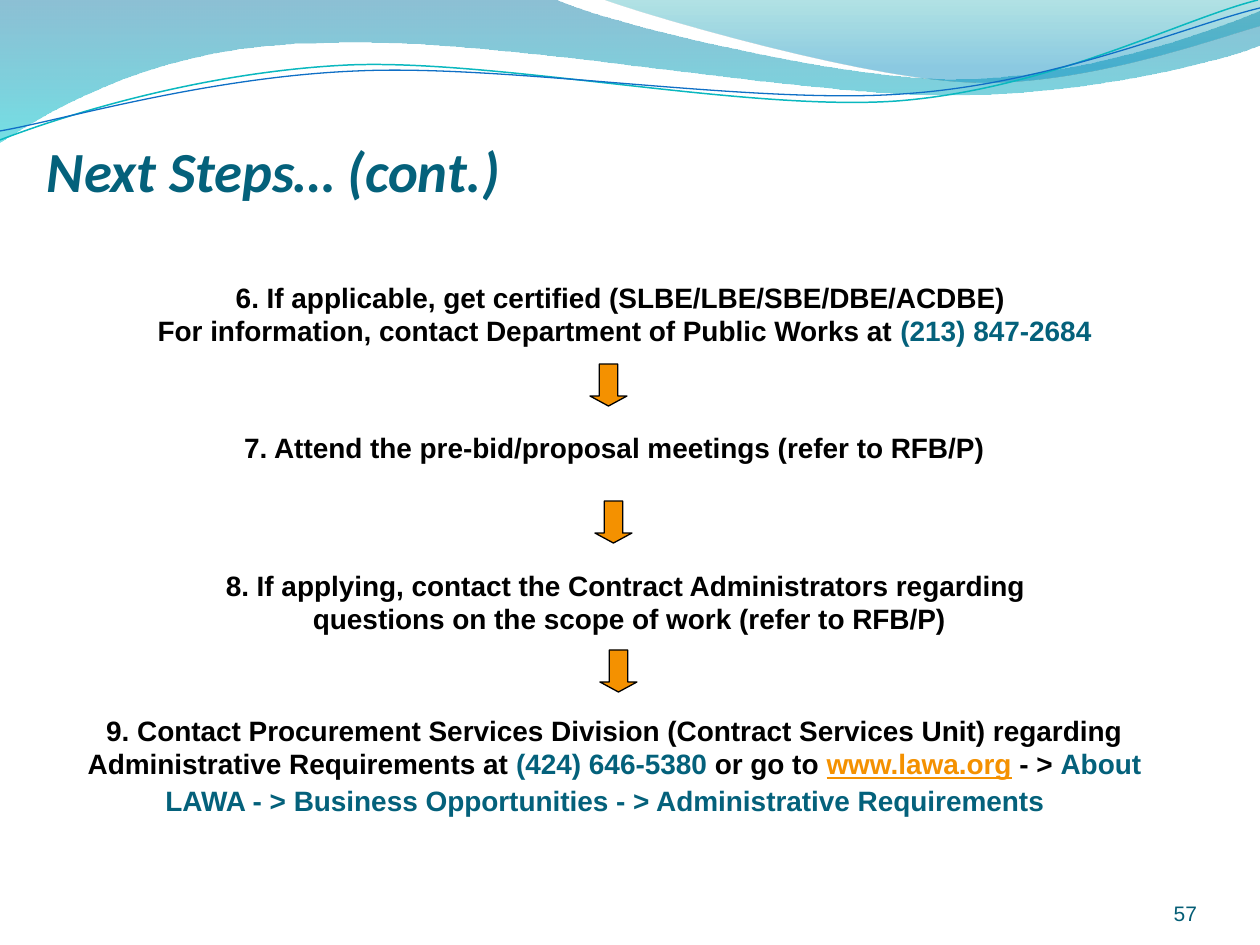
from lxml import etree
from pptx import Presentation
from pptx import util as u
from pptx.dml import color
from pptx.enum import shapes, text
from pptx.oxml import ns

COLORS = {
    "ink": "000000", "teal": "04617B", "orange": "F49100", "number": "045D75",
    "deep": "0074A1", "aqua": "00C6CF", "sea": "00A1A9", "sky": "008BBF",
    "teal_line": "0AB8BF", "blue_line": "0F6FC6",
}
SCALE = 914400 / 126

WAVES = [
    ([(0, 0), (556, 0), (600, 21, 837, 79, 955, 79), (1074, 79, 1207, 33, 1260, 11),
      (1260, 45), (1239, 55, 1096, 96, 940, 95), (784, 94, 481, 35, 324, 43),
      (163, 44, 58, 105, 0, 142)],
     [(0, "deep", 45), (1, "aqua", 55)]),
    ([(604, 0), (641, 14, 859, 78, 969, 82), (1079, 87, 1211, 40, 1260, 26), (1260, 0)],
     [(0, "sea", 30), (0.8, "sky", 45)]),
]
RIPPLES = [
    ([(0, 140), (60, 117, 199, 72, 349, 65), (498, 59, 747, 112, 898, 101),
      (1050, 89, 1182, 19, 1258, 0)], "teal_line", 0.85),
    ([(0, 131), (59, 121, 207, 77, 357, 71), (508, 64, 752, 105, 903, 94),
      (1053, 84, 1186, 26, 1260, 8)], "blue_line", 0.75),
]
BODY = {"name": "Arial", "size": u.Pt(16), "bold": True}
LINK = {"underline": True}
SPACER = {"name": "DejaVu Sans", "size": u.Pt(18)}
STEPS = [
    ((47, 274, 1155, 81), [
        [("6. If applicable, get certified (SLBE/LBE/SBE/DBE/ACDBE) ", "ink", {})],
        [("For information, contact Department of Public Works at ", "ink", {}),
         ("(213) 847-2684", "teal", {})]]),
    ((142, 424, 945, 47), [
        [("7. Attend the pre-bid/proposal meetings (refer to RFB/P)", "ink", {})]]),
    ((52, 562, 1155, 81), [
        [("8. If applying, contact the Contract Administrators regarding ", "ink", {})],
        [("questions on the scope of work (refer to RFB/P)", "ink", {})]]),
    ((74, 707, 1081, 118), [
        [("9. Contact Procurement Services Division (Contract Services Unit) regarding "
          "Administrative Requirements at ", "ink", {}),
         ("(424) 646-5380 ", "teal", {}), ("or go to ", "ink", {}),
         ("www.lawa.org", "orange", LINK), (" - > ", "ink", {}),
         ("About LAWA - > Business Opportunities - > Administrative Requirements ", "teal", {}),
         (" ", "teal", SPACER)]]),
]
ARROWS = [(590, 364, 37, 42), (595, 501, 37, 42), (600, 650, 37, 42)]


def px(length):
    return u.Emu(round(length * SCALE))


def rgb(key):
    return color.RGBColor.from_string(COLORS[key])


def apply(target, values):
    for name, value in values.items():
        setattr(target, name, value)


def place(shape, box):
    apply(shape, dict(zip(("left", "top", "width", "height"), map(px, box))))


def add_run(paragraph, words, ink, values):
    run = paragraph.add_run()
    run.text = words
    apply(run.font, values)
    run.font.color.rgb = rgb(ink)


def bend(edge, controls, left, top):
    edge.tag
    curve = etree.Element(ns.qn("a:cubicBezTo"))
    for x, y in zip(controls[::2], controls[1::2]):
        node = etree.SubElement(curve, ns.qn("a:pt"))
        node.set("x", str(px(x - left)))
        node.set("y", str(px(y - top)))
    edge.getparent().replace(edge, curve)


def add_outline(slide, segments, box, closed):
    nodes = [segment[-2:] for segment in segments]
    left, top = (min(axis) for axis in zip(*nodes))
    start, *rest = [(px(x), px(y)) for x, y in nodes]
    builder = slide.shapes.build_freeform(*start, scale=1.0)
    builder.add_line_segments(rest, close=closed)
    outline = builder.convert_to_shape(px(box[0]), px(box[1]))
    outline.shadow.inherit = False
    edges = list(outline._element.iter(ns.qn("a:lnTo")))
    for edge, segment in zip(edges, segments[1:]):
        if len(segment) == 6:
            bend(edge, segment, left, top)
    return outline


def add_banner(slide, box):
    for segments, stops in WAVES:
        wave = add_outline(slide, segments, box, True)
        wave.line.fill.background()
        wave.fill.gradient()
        wave.fill.gradient_angle = 270
        for stop, (position, ink, _) in zip(wave.fill.gradient_stops, stops):
            stop.position = position
            stop.color.rgb = rgb(ink)
        for tint, (_, _, opacity) in zip(wave._element.spPr.iter(ns.qn("a:srgbClr")), stops):
            etree.SubElement(tint, ns.qn("a:alpha")).set("val", str(opacity * 1000))
    for segments, ink, weight in RIPPLES:
        ripple = add_outline(slide, segments, box, False)
        ripple.fill.background()
        ripple.line.color.rgb = rgb(ink)
        ripple.line.width = u.Pt(weight)


def add_title(slide, box):
    title = slide.shapes.title
    place(title, box)
    apply(title.text_frame, {
        "margin_left": 0, "margin_top": px(6), "margin_right": 0, "margin_bottom": 0,
        "vertical_anchor": text.MSO_ANCHOR.BOTTOM, "word_wrap": True,
        "auto_size": text.MSO_AUTO_SIZE.NONE})
    heading = title.text_frame.paragraphs[0]
    heading.alignment = text.PP_ALIGN.LEFT
    add_run(heading, "Next Steps… (cont.)", "teal",
            {"name": "Calibri", "size": u.Pt(32.4), "bold": True, "italic": True})


def add_step(slide, box, lines):
    frame = slide.shapes.add_textbox(*map(px, box)).text_frame
    apply(frame, {"word_wrap": True, "auto_size": text.MSO_AUTO_SIZE.SHAPE_TO_FIT_TEXT})
    for index, line in enumerate(lines):
        paragraph = frame.add_paragraph() if index else frame.paragraphs[0]
        paragraph.alignment = text.PP_ALIGN.CENTER
        for words, ink, extra in line:
            add_run(paragraph, words, ink, {**BODY, **extra})


def add_arrow(slide, box):
    arrow = slide.shapes.add_shape(shapes.MSO_SHAPE.DOWN_ARROW, *map(px, box))
    arrow.shadow.inherit = False
    arrow.adjustments[0] = 0.5
    arrow.adjustments[1] = 0.27
    arrow.fill.solid()
    arrow.fill.fore_color.rgb = rgb("orange")
    arrow.line.color.rgb = rgb("ink")
    arrow.line.width = u.Pt(0.75)


def add_page_number(slide, box):
    frame = slide.shapes.add_textbox(*map(px, box)).text_frame
    apply(frame, {"margin_left": 0, "margin_top": 0, "margin_right": 0, "margin_bottom": 0,
                  "vertical_anchor": text.MSO_ANCHOR.BOTTOM, "word_wrap": True})
    frame.paragraphs[0].alignment = text.PP_ALIGN.RIGHT
    add_run(frame.paragraphs[0], "57", "number", {"name": "Arial", "size": u.Pt(12)})


def main():
    deck = Presentation()
    apply(deck, {"slide_width": px(1260), "slide_height": px(945)})
    slide = deck.slides.add_slide(deck.slide_layouts[5])
    add_banner(slide, (0, 0, 1260, 142))
    add_title(slide, (47, 126, 1191, 78))
    for box in ARROWS:
        add_arrow(slide, box)
    for box, lines in STEPS:
        add_step(slide, box, lines)
    add_page_number(slide, (1092, 876, 105, 50))
    deck.save("out.pptx")


if __name__ == "__main__":
    main()
